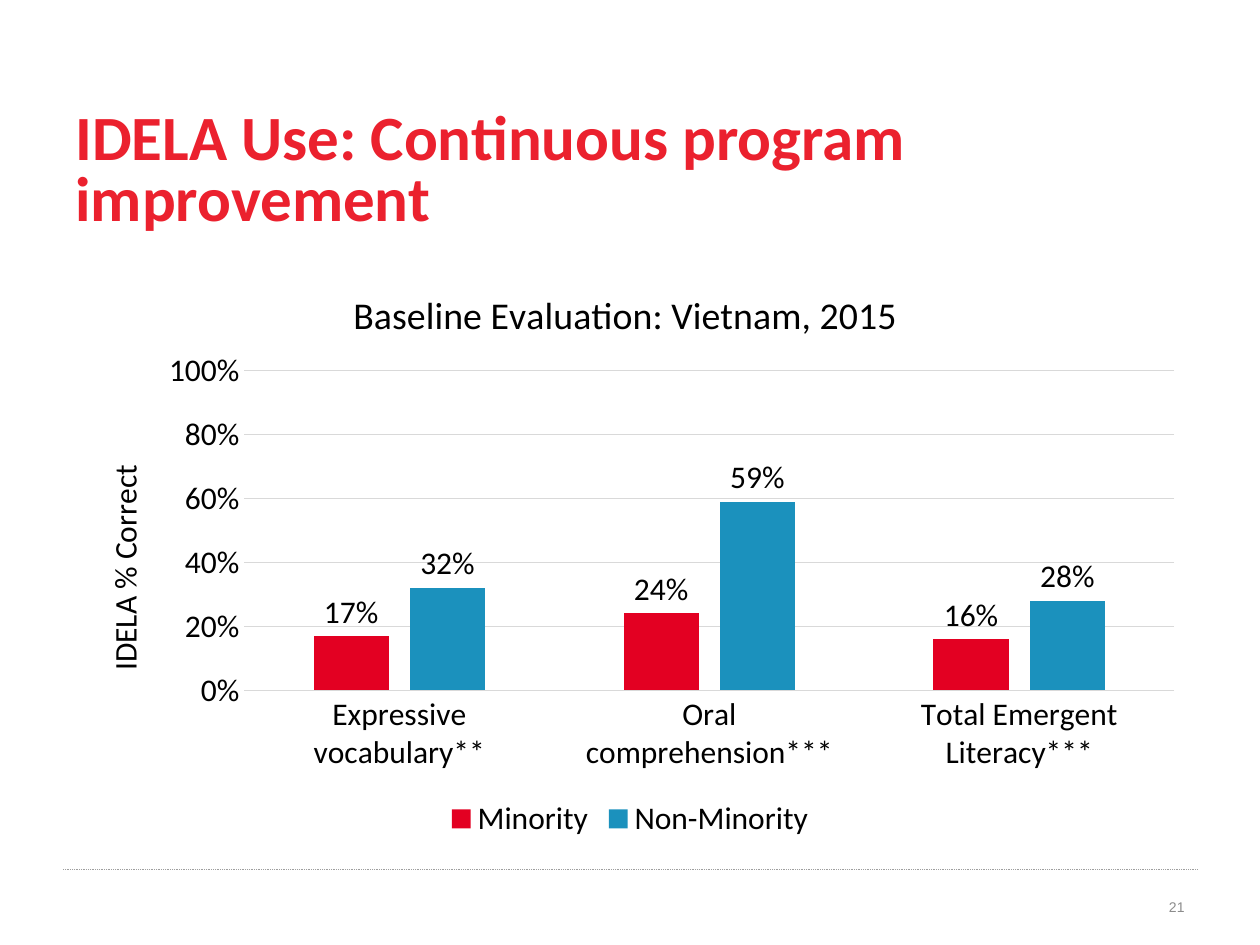
from lxml import etree
from pptx import Presentation
from pptx.chart.data import CategoryChartData
from pptx.dml.color import RGBColor
from pptx.enum import chart as ch, dml, shapes, text
from pptx.oxml.ns import qn
from pptx.util import Cm, Pt

# Content
TITLE = "IDELA Use: Continuous program improvement"
CHART_TITLE = "Baseline Evaluation: Vietnam, 2015"
AXIS_TITLE = "IDELA % Correct"
PAGE = "21"
CATEGORIES = ["Expressive vocabulary**", "Oral comprehension***", "Total Emergent Literacy***"]

RED = RGBColor(0xEB, 0x21, 0x2E)
CRIMSON = RGBColor(0xE3, 0x00, 0x22)
BLUE = RGBColor(0x1B, 0x91, 0xBD)
BLACK = RGBColor(0, 0, 0)
GRID = RGBColor(0xD9, 0xD9, 0xD9)
RULE = RGBColor(0x9E, 0x9E, 0x9E)
GREY = RGBColor(0x8C, 0x8C, 0x8C)

SERIES = [("Minority", [0.17, 0.24, 0.16], CRIMSON),
          ("Non-Minority", [0.32, 0.59, 0.28], BLUE)]
LEFT, WIDTH = Cm(1.27), Cm(22.86)


def set_font(font, size=18, color=BLACK, name="Calibri", bold=False):
    font.size, font.name, font.bold = Pt(size), name, bold
    font.color.rgb = color


def add_text(s, content, box, align=text.PP_ALIGN.LEFT, spacing=1.0, **fmt):
    tf = s.shapes.add_textbox(*box).text_frame
    tf.word_wrap = True
    tf.vertical_anchor = text.MSO_ANCHOR.MIDDLE
    p = tf.paragraphs[0]
    p.alignment, p.line_spacing = align, spacing
    r = p.add_run()
    r.text = content
    set_font(r.font, **fmt)


def place(parent, index, **fractions):
    """Fix a chart part at fractions of the chart's size."""
    for old in parent.findall(qn("c:layout")):
        parent.remove(old)
    layout = etree.Element(qn("c:layout"))
    manual = etree.SubElement(layout, qn("c:manualLayout"))
    if "w" in fractions:
        etree.SubElement(manual, qn("c:layoutTarget")).set("val", "inner")
    for tag in ("xMode", "yMode"):
        etree.SubElement(manual, qn("c:" + tag)).set("val", "edge")
    for tag, value in fractions.items():
        etree.SubElement(manual, qn("c:" + tag)).set("val", str(value))
    parent.insert(index, layout)


def add_heading(title, content, x, y, size=18):
    p = title.text_frame.paragraphs[0]
    r = p.add_run()
    r.text = content
    set_font(r.font, size=size)
    place(title._element, 1, x=x, y=y)


def grey_line(line):
    line.color.rgb, line.width = GRID, Pt(0.75)


def add_bar_chart(s):
    data = CategoryChartData(number_format="0%")
    data.categories = CATEGORIES
    for name, values, _ in SERIES:
        data.add_series(name, values)
    chart = s.shapes.add_chart(ch.XL_CHART_TYPE.COLUMN_CLUSTERED, LEFT, Cm(5.08),
                               WIDTH, Cm(11.94), data).chart
    set_font(chart.font)
    add_heading(chart.chart_title, CHART_TITLE, x=0.25, y=0.05, size=21.6)

    # Axes
    cat, val = chart.category_axis, chart.value_axis
    for axis in (cat, val):
        axis.major_tick_mark = axis.minor_tick_mark = ch.XL_TICK_MARK.NONE
        set_font(axis.tick_labels.font)
    grey_line(cat.format.line)
    val.format.line.fill.background()
    val.has_major_gridlines = True
    grey_line(val.major_gridlines.format.line)
    val.minimum_scale, val.maximum_scale, val.major_unit = 0, 1, 0.2
    val.tick_labels.number_format = "0%"
    val.tick_labels.number_format_is_linked = False
    add_heading(val.axis_title, AXIS_TITLE, x=0.03, y=0.35)

    # Bars and their labels
    plot = chart.plots[0]
    plot.gap_width, plot.overlap, plot.vary_by_categories = 184, -28, False
    for series, (_, _, color) in zip(plot.series, SERIES):
        series.format.fill.solid()
        series.format.fill.fore_color.rgb = color
        labels = series.data_labels
        labels.show_value = True
        labels.number_format, labels.number_format_is_linked = "0%", False
        labels.position = ch.XL_LABEL_POSITION.OUTSIDE_END
        set_font(labels.font)
    place(chart._chartSpace.chart.plotArea, 0, x=0.16, y=0.2, w=0.82, h=0.54)

    # Legend
    chart.has_legend = True
    chart.legend.position = ch.XL_LEGEND_POSITION.BOTTOM
    chart.legend.include_in_layout = False
    set_font(chart.legend.font)


prs = Presentation()
prs.slide_width, prs.slide_height = Cm(25.4), Cm(19.05)
s = prs.slides.add_slide(prs.slide_layouts[6])

# Footer rule
rule = s.shapes.add_connector(shapes.MSO_CONNECTOR.STRAIGHT, LEFT, Cm(17.53),
                              LEFT + WIDTH, Cm(17.53))
rule.line.color.rgb, rule.line.width = RULE, Pt(0.5)
rule.line.dash_style = dml.MSO_LINE.ROUND_DOT
etree.SubElement(rule._element.spPr, qn("a:effectLst"))

# Title, page number and chart
add_text(s, TITLE, (LEFT, Cm(2.29), WIDTH, Cm(2.39)), spacing=0.8,
         size=36, color=RED, bold=True)
add_text(s, PAGE, (Cm(18.21), Cm(18.03), Cm(5.92), Cm(0.51)),
         align=text.PP_ALIGN.RIGHT, size=8, color=GREY, name="Arial")
add_bar_chart(s)

prs.save("out.pptx")
